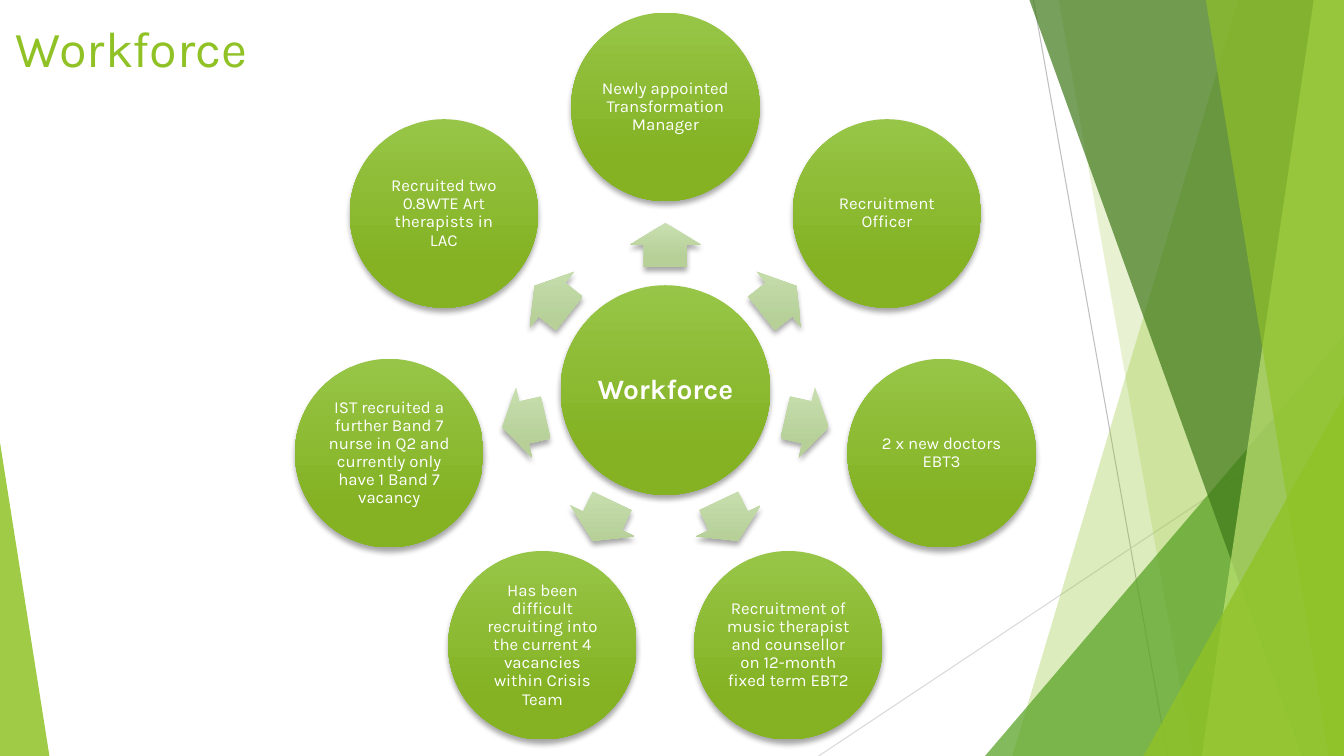
from dataclasses import dataclass
from math import cos, radians, sin

from lxml.etree import SubElement
from pptx import Presentation
from pptx.dml.color import RGBColor
from pptx.enum.shapes import MSO_CONNECTOR as Link, MSO_SHAPE as Shape
from pptx.enum.text import MSO_ANCHOR as Anchor, PP_ALIGN as Align
from pptx.oxml.ns import qn
from pptx.util import Inches, Pt

WIDE, HIGH = 13.33, 7.5
FONT = "Karla"
WHITE = RGBColor(0xFF, 0xFF, 0xFF)
BLACK = RGBColor(0, 0, 0)
LIME = RGBColor(0x90, 0xC2, 0x26)
GREEN = RGBColor(0x54, 0xA0, 0x21)
FOREST = RGBColor(0x3F, 0x78, 0x19)
PALE = RGBColor(0xC0, 0xE4, 0x74)
GREY = RGBColor(0xBF, 0xBF, 0xBF)
SILVER = RGBColor(0xD9, 0xD9, 0xD9)
DISC = (RGBColor(0x97, 0xC5, 0x47), RGBColor(0x84, 0xB2, 0x23))
ARROW = (RGBColor(0xC9, 0xDF, 0xB1), RGBColor(0xB6, 0xD0, 0x98))

MID_X, MID_Y = 6.6, 3.87
HUB, NODE = 2.08, 1.87
RING, ARROW_RING = 2.81, 1.44


@dataclass
class Ray:
    start: tuple[float, float]
    end: tuple[float, float]
    color: RGBColor


@dataclass
class Band:
    """Full-height facet reaching the right edge, slanted on its left side."""
    top: float
    foot: float
    color: RGBColor
    alpha: int


@dataclass
class Wedge:
    """Right triangle standing on the bottom edge."""
    left: float
    top: float
    width: float
    peak: float
    color: RGBColor
    alpha: int


RAYS = [
    Ray((10.25, 0), (11.58, HIGH), GREY),
    Ray((WIDE, 4.03), (8.12, HIGH), SILVER),
]
FACETS = [
    Band(12.28, 10.04, LIME, 30),
    Band(10.5, 11.83, LIME, 20),
    Wedge(9.77, 3.33, 3.56, 1, GREEN, 72),
    Band(10.21, 12.91, FOREST, 70),
    Band(13.03, 11.92, PALE, 70),
    Band(11.96, 13.18, LIME, 65),
    Wedge(11.34, 3.93, 1.99, 1, LIME, 80),
    Wedge(0, 4.39, 0.49, 0, LIME, 85),
]
# Clockwise from the top
TOPICS = [
    "Newly appointed Transformation Manager",
    "Recruitment Officer",
    "2 x new doctors EBT3",
    "Recruitment of music therapist and counsellor on 12-month fixed term EBT2",
    "Has been difficult recruiting into the current 4 vacancies within Crisis Team",
    "IST recruited a further Band 7 nurse in Q2 and currently only have 1 Band 7 vacancy",
    "Recruited two 0.8WTE Art therapists in LAC",
]


def draw_ray(shapes, ray: Ray) -> None:
    line = shapes.add_connector(
        Link.STRAIGHT, *map(Inches, ray.start), *map(Inches, ray.end))
    line.line.color.rgb = ray.color
    line.line.width = Pt(0.75)
    SubElement(line._element.spPr, qn("a:effectLst"))


def draw_facet(shapes, facet: Band | Wedge) -> None:
    if isinstance(facet, Band):
        pen = shapes.build_freeform(Inches(facet.top), 0)
        rest = [(WIDE, 0), (WIDE, HIGH), (facet.foot, HIGH)]
        pen.add_line_segments([(Inches(x), Inches(y)) for x, y in rest])
        shape = pen.convert_to_shape()
    else:
        shape = shapes.add_shape(
            Shape.ISOSCELES_TRIANGLE, Inches(facet.left), Inches(facet.top),
            Inches(facet.width), Inches(HIGH - facet.top))
        shape.adjustments[0] = facet.peak
    shape.shadow.inherit = False
    shape.line.fill.background()
    shape.fill.solid()
    shape.fill.fore_color.rgb = facet.color
    tint = shape._element.spPr.find(f".//{qn('a:srgbClr')}")
    SubElement(tint, qn("a:alpha"), val=str(facet.alpha * 1000))


def add_glossy(shapes, kind: Shape, x: float, y: float, width: float,
               height: float, colors: tuple[RGBColor, RGBColor]):
    """Add a shape centred on x, y with an upright gradient and a soft shadow."""
    shape = shapes.add_shape(kind, Inches(x - width / 2), Inches(y - height / 2),
                             Inches(width), Inches(height))
    shape.line.fill.background()
    shape.fill.gradient()
    shape.fill.gradient_angle = 270
    for stop, color, place in zip(shape.fill.gradient_stops, colors, (0, 0.78)):
        stop.color.rgb = color
        stop.position = place
    props = shape._element.spPr
    props.find(qn("a:gradFill")).set("rotWithShape", "0")
    shape.shadow.inherit = False
    shadow = SubElement(
        props.find(qn("a:effectLst")), qn("a:outerShdw"), blurRad=str(Pt(4)),
        dist=str(Pt(3)), dir="5400000", rotWithShape="0")
    tint = SubElement(shadow, qn("a:srgbClr"), val=str(BLACK))
    SubElement(tint, qn("a:alpha"), val="35000")
    return shape


def add_run(par, text: str, size: int, color: RGBColor, bold: bool = False) -> None:
    run = par.add_run()
    run.text = text
    run.font.name = FONT
    run.font.size = Pt(size)
    run.font.bold = bold
    run.font.color.rgb = color


def draw_disc(shapes, x: float, y: float, width: float, text: str,
              size: int, inset: float, bold: bool = False) -> None:
    disc = add_glossy(shapes, Shape.OVAL, x, y, width, width, DISC)
    frame = disc.text_frame
    frame.word_wrap = True
    frame.vertical_anchor = Anchor.MIDDLE
    frame.margin_left = frame.margin_right = Inches(inset)
    frame.margin_top = frame.margin_bottom = Inches(inset)
    par = frame.paragraphs[0]
    par.alignment = Align.CENTER
    par.line_spacing = 0.9
    add_run(par, text, size, WHITE, bold)


def draw_wheel(shapes) -> None:
    draw_disc(shapes, MID_X, MID_Y, HUB, "Workforce", 20, 0.03, bold=True)
    for i, topic in enumerate(TOPICS):
        turn = 270 + i * 360 / len(TOPICS)
        dx, dy = cos(radians(turn)), sin(radians(turn))
        arrow = add_glossy(shapes, Shape.RIGHT_ARROW, MID_X + ARROW_RING * dx,
                           MID_Y + ARROW_RING * dy, 0.44, 0.71, ARROW)
        arrow.adjustments[0] = 0.6
        arrow.adjustments[1] = 0.5
        arrow.rotation = turn % 360
        draw_disc(shapes, MID_X + RING * dx, MID_Y + RING * dy, NODE,
                  topic, 12, 0.02)


def draw_title(shapes) -> None:
    box = shapes.add_textbox(Inches(0.06), Inches(0.12), Inches(7.5), Inches(1.44))
    box.text_frame.word_wrap = True
    add_run(box.text_frame.paragraphs[0], "Workforce", 36, LIME)


def main() -> None:
    deck = Presentation()
    deck.slide_width, deck.slide_height = Inches(WIDE), Inches(HIGH)
    shapes = deck.slides.add_slide(deck.slide_layouts[6]).shapes
    for ray in RAYS:
        draw_ray(shapes, ray)
    for facet in FACETS:
        draw_facet(shapes, facet)
    draw_title(shapes)
    draw_wheel(shapes)
    deck.save("out.pptx")


if __name__ == "__main__":
    main()
